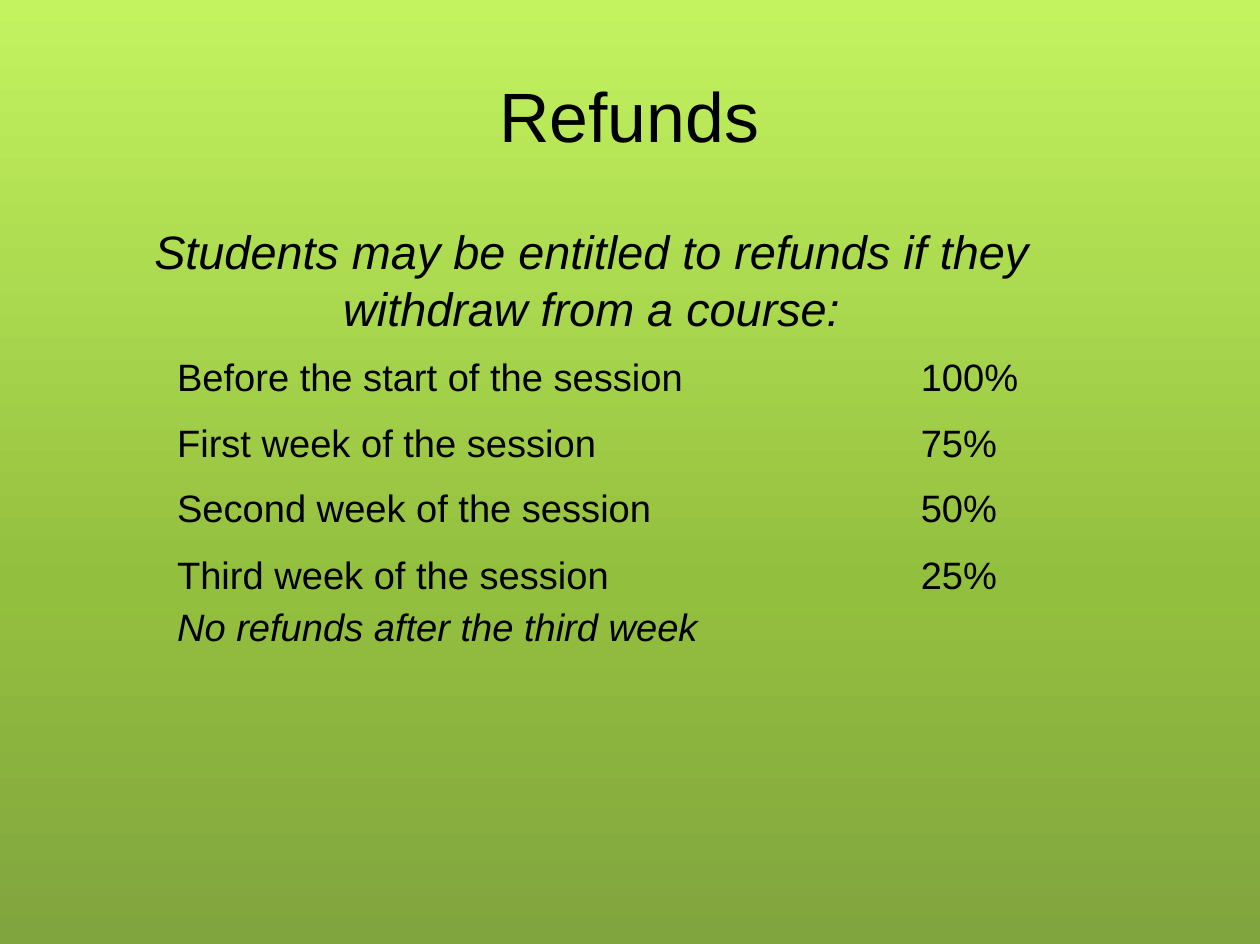
from copy import deepcopy

from pptx import Presentation
from pptx.dml.color import RGBColor
from pptx.enum import text
from pptx.oxml import ns
from pptx.util import Inches, Pt

TITLE = "Refunds"
INTRO = "Students may be entitled to refunds if they withdraw from a course:"
REFUNDS = [
    (["Before the start of the session"], "100%"),
    (["First week of the session"], "75%"),
    (["Second week of the session"], "50%"),
    (["Third week of the session", "No refunds after the third week"], "25%"),
]
COLUMN_WIDTHS = (5.5, 1.92)
COLUMN_INDENTS = (0.03, 1.04)
ROW_HEIGHTS = (0.5, 0.57, 0.57, 0.92)
ROW_LINE_SPACING = (26.6, None, None, 28.1)
NO_TABLE_STYLE = "{2D5ABB26-0587-4C30-8999-92F81FD0307C}"

FONT = "Arial"
BLACK = RGBColor(0x00, 0x00, 0x00)
LIME = RGBColor(0xC3, 0xF3, 0x5F)
LEAF = RGBColor(0x93, 0xBF, 0x3F)
OLIVE = RGBColor(0x81, 0xA5, 0x3E)
GRADIENT = [(0, LIME), (0.62, LEAF), (1, OLIVE)]


def paint_background(page):
    fill = page.background.fill
    fill.gradient()
    fill.gradient_angle = 270
    stop_list = next(page.element.iter(ns.qn("a:gsLst")))
    stop_list.append(deepcopy(stop_list[-1]))
    for stop, (position, color) in zip(fill.gradient_stops, GRADIENT):
        stop.position = position
        stop.color.rgb = color


def format_para(para, size, indent=0.01, before=0, line=None, italic=False):
    para.space_before = Pt(before)
    if line:
        para.line_spacing = Pt(line)
    properties = para._p.get_or_add_pPr()
    properties.set("marL", str(Inches(indent)))
    properties.set("indent", "0")
    for span in para.runs:
        span.font.name = FONT
        span.font.size = Pt(size)
        span.font.italic = italic
        span.font.color.rgb = BLACK


def set_margins(box, top):
    box.margin_left = box.margin_right = box.margin_bottom = 0
    box.margin_top = Inches(top)


def add_title(page):
    title = page.shapes.title
    title.left, title.top = Inches(4.36), Inches(0.61)
    title.width, title.height = Inches(2.3), Inches(0.76)
    frame = title.text_frame
    frame.text = TITLE
    frame.word_wrap = True
    frame.auto_size = text.MSO_AUTO_SIZE.NONE
    frame.vertical_anchor = text.MSO_ANCHOR.BOTTOM
    set_margins(frame, 0.01)
    para = frame.paragraphs[0]
    para.alignment = text.PP_ALIGN.LEFT
    format_para(para, 44, before=1)


def add_intro(page):
    box = page.shapes.add_textbox(Inches(1.01), Inches(1.88), Inches(8.33), Inches(1.04))
    frame = box.text_frame
    frame.text = INTRO
    frame.word_wrap = True
    set_margins(frame, 0.06)
    para = frame.paragraphs[0]
    para.alignment = text.PP_ALIGN.CENTER
    format_para(para, 29.5, before=4.2, line=36, italic=True)


def add_refund_table(page):
    frame = page.shapes.add_table(
        len(REFUNDS), len(COLUMN_WIDTHS), Inches(1.52), Inches(3.13),
        Inches(sum(COLUMN_WIDTHS)), Inches(sum(ROW_HEIGHTS)))
    table = frame.table
    table.first_row = table.horz_banding = False
    next(frame.element.iter(ns.qn("a:tableStyleId"))).text = NO_TABLE_STYLE
    for column, width in zip(table.columns, COLUMN_WIDTHS):
        column.width = Inches(width)
    for row, (periods, share) in enumerate(REFUNDS):
        table.rows[row].height = Inches(ROW_HEIGHTS[row])
        for col, lines in enumerate((periods, [share])):
            cell = table.cell(row, col)
            cell.fill.background()
            set_margins(cell, 0.07 if row else 0)
            cell.text_frame.text = "\n".join(lines)
            for number, para in enumerate(cell.text_frame.paragraphs):
                format_para(para, 24, COLUMN_INDENTS[col], 4.9 if row else 0,
                            ROW_LINE_SPACING[row], italic=number > 0)


def main():
    deck = Presentation()
    deck.slide_width, deck.slide_height = Inches(11.03), Inches(8.26)
    page = deck.slides.add_slide(deck.slide_layouts.get_by_name("Title Only"))
    paint_background(page)
    add_title(page)
    add_intro(page)
    add_refund_table(page)
    deck.save("out.pptx")


if __name__ == "__main__":
    main()
